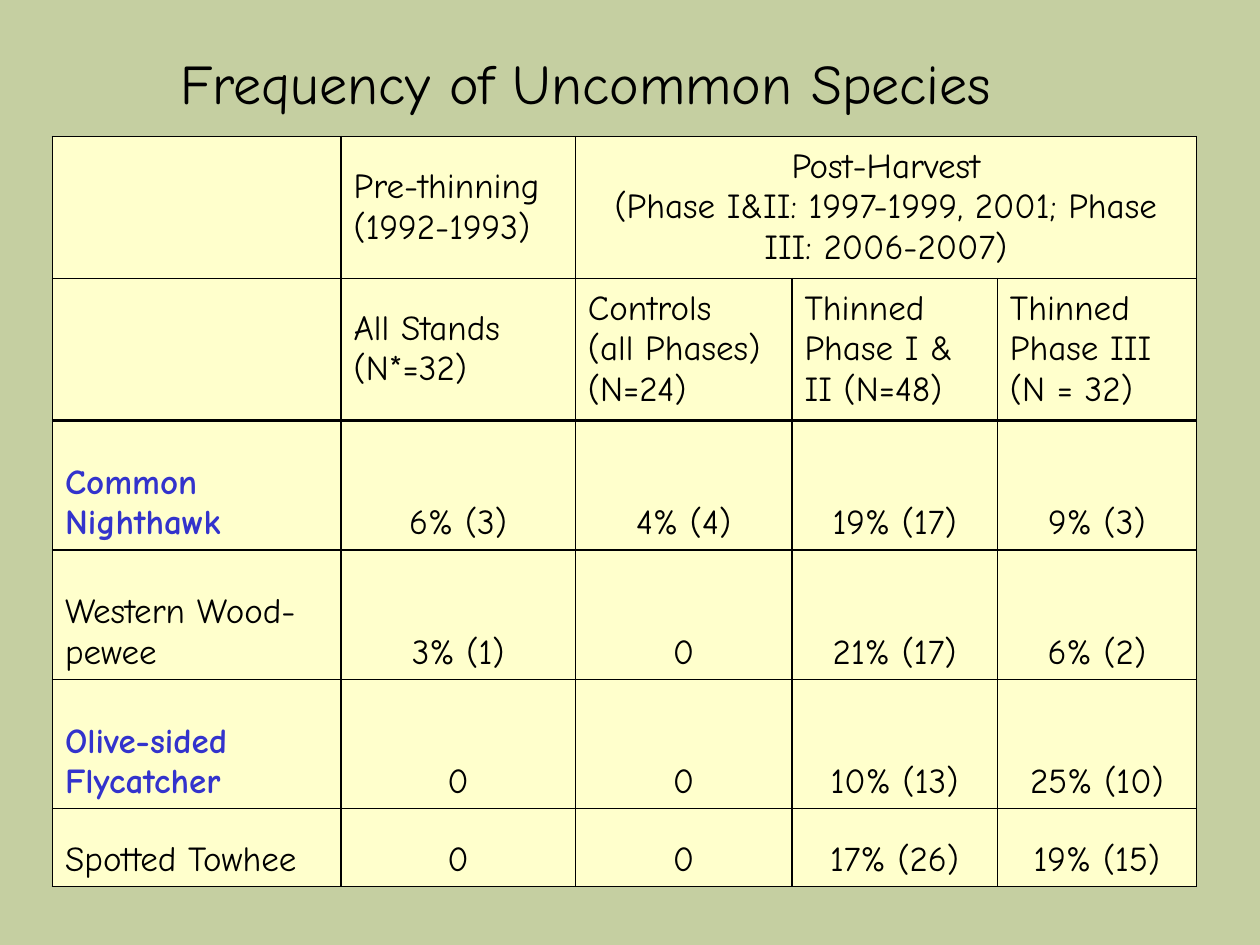
"""Build a slide with a table of how often uncommon species were seen."""
from dataclasses import dataclass

import pptx
import pptx.dml.color
import pptx.enum.text
import pptx.util
from lxml import etree
from pptx.oxml.ns import qn

Pt = pptx.util.Pt
RGB = pptx.dml.color.RGBColor.from_string
ALIGN = pptx.enum.text.PP_ALIGN
ANCHOR = pptx.enum.text.MSO_ANCHOR


@dataclass(frozen=True)
class Theme:
    font: str = "Comic Neue"
    back: str = "C5CFA1"
    cell: str = "FFFFCC"
    ink: str = "000000"
    mark: str = "3333CC"
    title: int = 32
    body: int = 20
    thin: float = 1
    thick: float = 2.25


THEME = Theme()
COLS = [164.9, 133.9, 123.8, 117.4, 113.8]
ROWS = [81.2, 81, 74, 74, 74, 44.5]
HEADS = 2
MARKED = ("Common Nighthawk", "Olive-sided Flycatcher")
DATA = [
    ["", "Pre-thinning (1992-1993)",
     "Post-Harvest\n(Phase I&II: 1997-1999, 2001; Phase III: 2006-2007)", "", ""],
    ["", "All Stands (N*=32)", "Controls\n(all Phases) (N=24)",
     "Thinned Phase I & II (N=48)", "Thinned Phase III (N = 32)"],
    ["Common Nighthawk", "6% (3)", "4% (4)", "19% (17)", "9% (3)"],
    ["Western Wood-pewee", "3% (1)", "0", "21% (17)", "6% (2)"],
    ["Olive-sided Flycatcher", "0", "0", "10% (13)", "25% (10)"],
    ["Spotted Towhee", "0", "0", "17% (26)", "19% (15)"],
]


def write(frame, text, size, color=THEME.ink, bold=False, align=ALIGN.LEFT):
    """Fill a text frame and style its runs."""
    frame.text = text
    for para in frame.paragraphs:
        para.alignment = align
        for run in para.runs:
            font = run.font
            font.name, font.size, font.bold = THEME.font, Pt(size), bold
            font.color.rgb = RGB(color)


def border(cell, side, width):
    """Draw one solid side of a cell."""
    props = cell._tc.get_or_add_tcPr()
    line = etree.SubElement(props, qn(f"a:ln{side}"), w=str(Pt(width)))
    fill = etree.SubElement(line, qn("a:solidFill"))
    etree.SubElement(fill, qn("a:srgbClr"), val=THEME.ink)


def style(cell, row, col):
    """Give a cell its borders, fill and text."""
    widths = {"L": THEME.thin, "R": THEME.thin,
              "T": THEME.thick if row == HEADS else THEME.thin,
              "B": THEME.thick if row == HEADS - 1 else THEME.thin}
    for side, width in widths.items():
        border(cell, side, width)
    cell.fill.solid()
    cell.fill.fore_color.rgb = RGB(THEME.cell)
    text = DATA[row][col]
    head, mark = row < HEADS, text in MARKED
    mid = (col > 0 and not head) or (row, col) == (0, 2)
    cell.vertical_anchor = ANCHOR.MIDDLE if head else ANCHOR.BOTTOM
    write(cell.text_frame, text, THEME.body,
          THEME.mark if mark else THEME.ink, mark,
          ALIGN.CENTER if mid else ALIGN.LEFT)


def add_title(slide):
    """Place the slide title."""
    box = slide.shapes.add_textbox(Pt(96), Pt(24), Pt(552), Pt(45.4))
    box.text_frame.word_wrap = True
    write(box.text_frame, "Frequency of Uncommon Species", THEME.title)


def add_grid(slide):
    """Place the species table."""
    frame = slide.shapes.add_table(len(ROWS), len(COLS), Pt(30), Pt(78),
                                   Pt(sum(COLS)), Pt(sum(ROWS)))
    table = frame.table
    table.first_row = table.horz_banding = False
    for part, width in zip(table.columns, COLS):
        part.width = Pt(width)
    for part, height in zip(table.rows, ROWS):
        part.height = Pt(height)
    for row in range(len(ROWS)):
        for col in range(len(COLS)):
            style(table.cell(row, col), row, col)
    table.cell(0, 2).merge(table.cell(0, 4))


def main():
    """Build and save the deck."""
    deck = pptx.Presentation()
    deck.slide_width, deck.slide_height = Pt(720), Pt(540)
    slide = deck.slides.add_slide(deck.slide_layouts[6])
    slide.background.fill.solid()
    slide.background.fill.fore_color.rgb = RGB(THEME.back)
    add_grid(slide)
    add_title(slide)
    deck.save("out.pptx")


if __name__ == "__main__":
    main()
